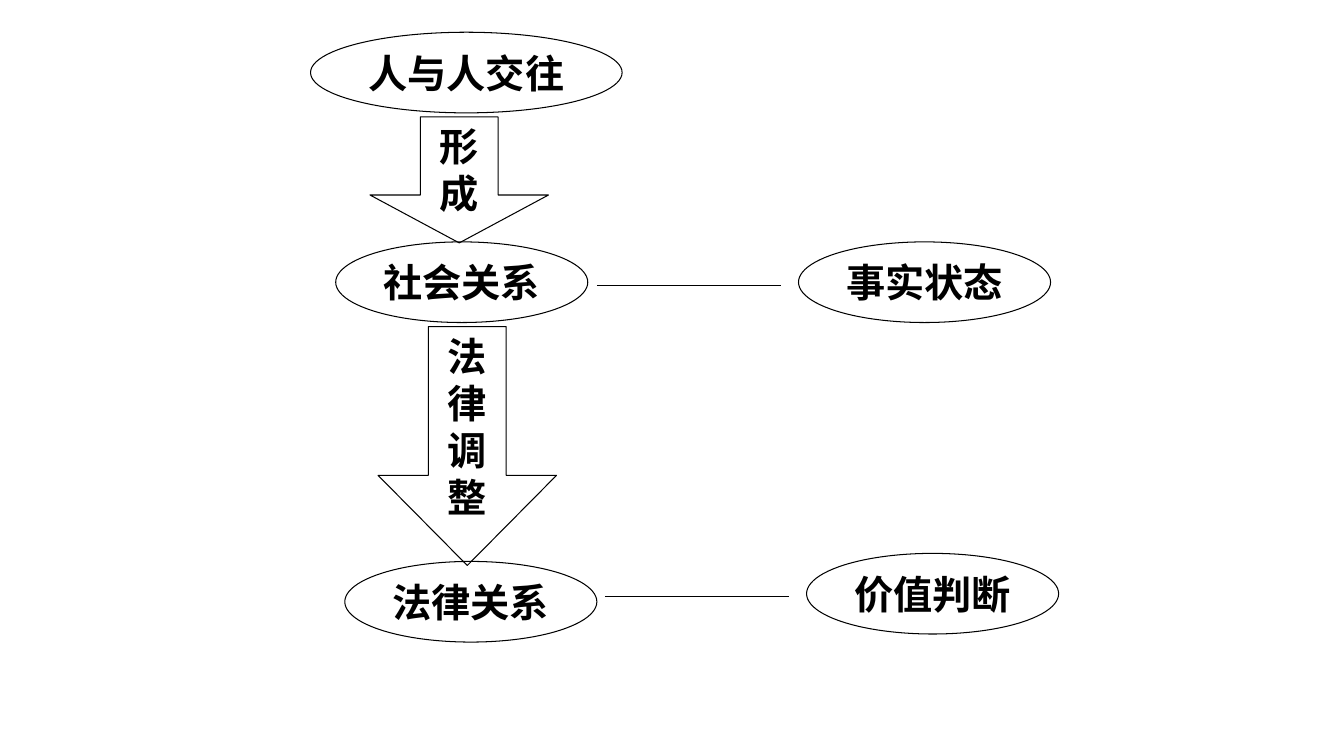
from pptx import Presentation
from pptx.dml.color import RGBColor
from pptx.enum.shapes import MSO_CONNECTOR, MSO_SHAPE
from pptx.enum.text import MSO_ANCHOR, MSO_AUTO_SIZE, PP_ALIGN
from pptx.oxml.ns import qn
from pptx.util import Pt
from lxml import etree

OVAL, ARROW = MSO_SHAPE.OVAL, MSO_SHAPE.DOWN_ARROW
STRAIGHT = MSO_CONNECTOR.STRAIGHT
MIDDLE, CENTER = MSO_ANCHOR.MIDDLE, PP_ALIGN.CENTER
GROW = MSO_AUTO_SIZE.SHAPE_TO_FIT_TEXT

FONT, BLACK = "Times New Roman", "000000"
OVAL_W, OVAL_H = 250, 80
ARROW_W, SHAFT = 177, 0.436
LINK_W = 183


def px(n):
    """Turn px, 100 to the inch, into EMU."""
    return n * 9144


def paint(ink, color):
    ink.color.rgb = RGBColor.from_string(color)


def write(shape, text, size=28, bold=True, color=BLACK):
    frame = shape.text_frame
    frame.word_wrap = True
    frame.auto_size = GROW
    frame.vertical_anchor = MIDDLE
    para = frame.paragraphs[0]
    para.alignment = CENTER
    run = para.add_run()
    run.text = text
    font = run.font
    font.name, font.size, font.bold = FONT, Pt(size), bold
    paint(font, color)


def stroke(line):
    line.width = Pt(0.75)
    paint(line, BLACK)


def block(slide, kind, text, x, y, w, h):
    """Draw an outlined shape with centred text."""
    shape = slide.shapes.add_shape(kind, px(x), px(y), px(w), px(h))
    shape.shadow.inherit = False
    shape.fill.background()
    stroke(shape.line)
    write(shape, text)
    return shape


def oval(slide, text, x, y, w=OVAL_W):
    block(slide, OVAL, text, x, y, w, OVAL_H)


def arrow(slide, text, x, y, h, head):
    shape = block(slide, ARROW, text, x, y, ARROW_W, h)
    shape.adjustments[0] = SHAFT
    shape.adjustments[1] = head


def link(slide, x, y):
    line = slide.shapes.add_connector(
        STRAIGHT, px(x), px(y), px(x + LINK_W), px(y))
    stroke(line.line)
    etree.SubElement(line._element.spPr, qn("a:effectLst"))


def chain(slide, x, y):
    """Stack the steps that lead from contact to legal relations."""
    oval(slide, "人与人交往", x, y, w=309)
    arrow(slide, "形成", x + 59, y + 84, 125, 0.38)
    oval(slide, "社会关系", x + 25, y + 208)
    arrow(slide, "法律调整", x + 67, y + 292, 237, 0.505)
    oval(slide, "法律关系", x + 34, y + 525)


def note(slide, text, x, y, drop):
    """Draw a link, then the oval it leads to; drop is the link's depth."""
    link(slide, x, y + drop)
    oval(slide, text, x + LINK_W + 17, y)


def main():
    deck = Presentation()
    deck.slide_width, deck.slide_height = px(1333), px(750)
    slide = deck.slides.add_slide(deck.slide_layouts[6])
    chain(slide, 308, 32)
    note(slide, "事实状态", 592, 240, 43)
    note(slide, "价值判断", 600, 549, 43)
    deck.save("out.pptx")


if __name__ == "__main__":
    main()
